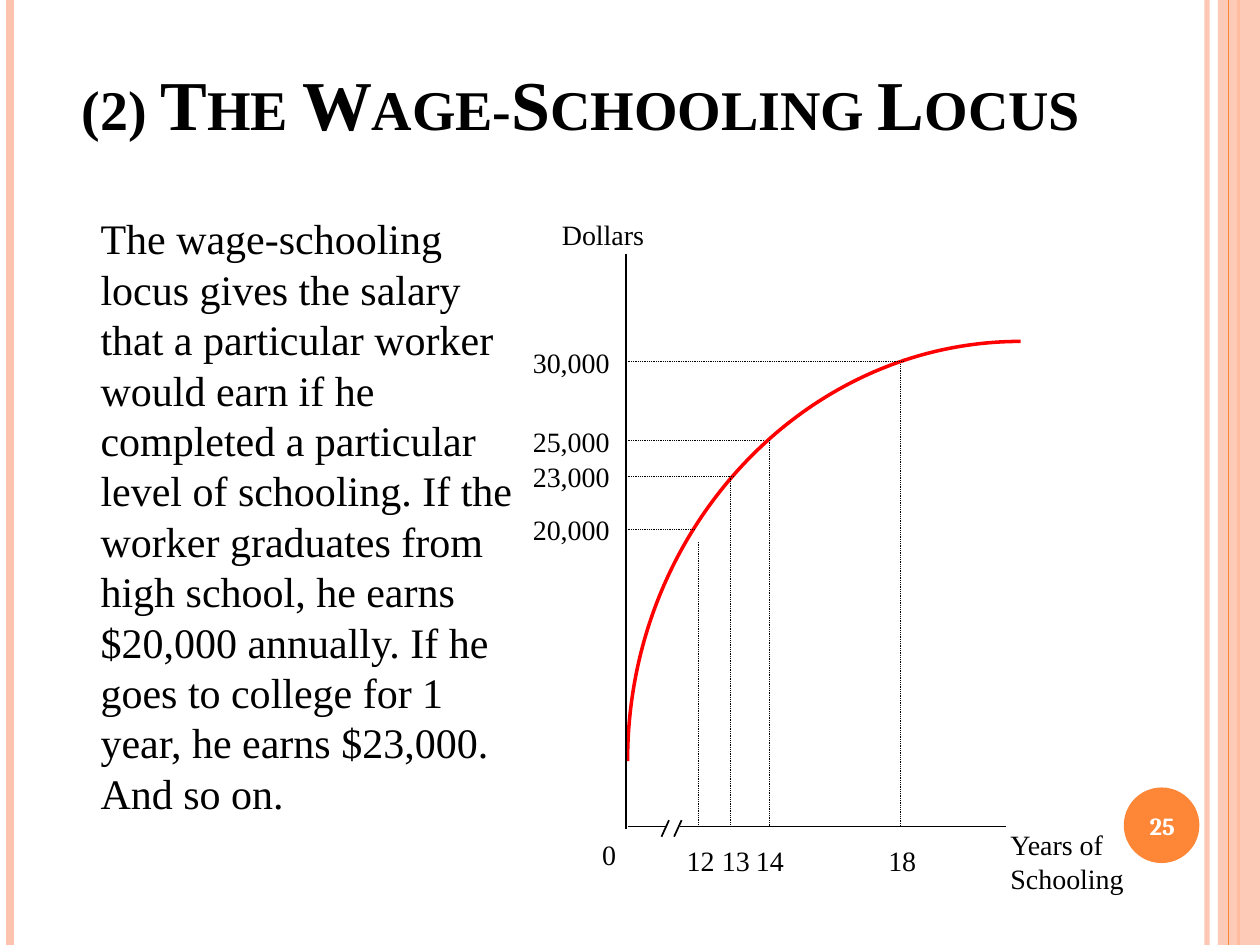
from pptx import Presentation
from pptx.dml.color import RGBColor
from pptx.enum.dml import MSO_LINE_DASH_STYLE as Dash
from pptx.enum.shapes import MSO_CONNECTOR as Connector, MSO_SHAPE as Shape
from pptx.enum.text import MSO_ANCHOR as Anchor, PP_ALIGN as Align
from pptx.oxml.ns import qn
from pptx.util import Pt
from lxml.etree import SubElement

BLACK = RGBColor(0x00, 0x00, 0x00)
WHITE = RGBColor(0xFF, 0xFF, 0xFF)
RED = RGBColor(0xFF, 0x00, 0x00)
PEACH = RGBColor(0xFE, 0xC3, 0xAE)
ORANGE = RGBColor(0xFE, 0x86, 0x37)
SERIF = "Times New Roman"

WIDTH, HEIGHT = 720, 540
TITLE = "(2) The Wage-Schooling Locus"
BODY = (
    "The wage-schooling locus gives the salary that a particular worker would earn "
    "if he completed a particular level of schooling. If the worker graduates from "
    "high school, he earns $20,000 annually. If he goes to college for 1 year, he "
    "earns $23,000. And so on."
)

LEFT_STRIPES = [(689.8, PEACH, 3, 93), (5.8, PEACH, 4.5, 100), (707.8, ORANGE, 1.5, 100)]
RIGHT_STRIPE = (702, ORANGE, 0.75, 100)

AXIS_X, AXIS_Y = 357.8, 472.3
CURVE_LEFT, CURVE_TOP, CURVE_RIGHT, CURVE_BOTTOM = 358.6, 195.1, 583.2, 434.9
BEZIER = [(0.45, 0), (0, 0.45), (0, 1)]
AXES = [
    (AXIS_X, 145.4, AXIS_X, 473.8),
    (CURVE_LEFT, AXIS_Y, 380.9, AXIS_Y),
    (388.8, AXIS_Y, 574.6, AXIS_Y),
]
BREAK_MARKS = [378, 385.2]

# year, wage, drop x, drop top, guide y, guide end, year label left
POINTS = [
    ("12", "20,000", 398.9, 309.6, 302.4, 396.7, 391.7),
    ("13", "23,000", 417.6, 272.9, 272.2, 419.8, 411.8),
    ("14", "25,000", 439.9, 251.3, 251.8, 437, 431.3),
    ("18", "30,000", 514.8, 208.1, 206.6, 516.2, 506.9),
]
AXIS_LABELS = [
    ("0", 343.4, 478.1, 12.2, 21.6),
    ("Dollars", 320.4, 123.8, 62.6, 28.1),
    ("Years of Schooling", 576.7, 472.3, 69.8, 39.6),
]


def assign(target, values):
    for name, value in values.items():
        setattr(target, name, value)


def set_alpha(fill_owner, percent):
    color = fill_owner.find(".//" + qn("a:srgbClr"))
    SubElement(color, qn("a:alpha")).set("val", str(percent * 1000))


def add_line(page, start_x, start_y, end_x, end_y, color=BLACK, width=1, dash=None, alpha=100):
    line = page.shapes.add_connector(
        Connector.STRAIGHT, Pt(start_x), Pt(start_y), Pt(end_x), Pt(end_y))
    line.line.color.rgb = color
    assign(line.line, {"width": Pt(width), "dash_style": dash})
    properties = line._element.spPr
    if alpha < 100:
        set_alpha(properties, alpha)
    SubElement(properties, qn("a:effectLst"))


def add_stripe(page, x, color, width, alpha):
    add_line(page, x, 0, x, HEIGHT, color, width, alpha=alpha)


def add_solid(page, kind, left, top, width, height, color):
    shape = page.shapes.add_shape(kind, Pt(left), Pt(top), Pt(width), Pt(height))
    shape.shadow.inherit = False
    shape.fill.solid()
    shape.fill.fore_color.rgb = color
    shape.line.fill.background()
    return shape


def add_text(page, text, left, top, width, height, size, inset=None,
             anchor=Anchor.TOP, align=Align.LEFT, spacing=None, font=SERIF, bold=False):
    box = page.shapes.add_textbox(Pt(left), Pt(top), Pt(width), Pt(height))
    frame = box.text_frame
    assign(frame, {"word_wrap": True, "vertical_anchor": anchor})
    if inset is not None:
        sides = ("left", "top", "right", "bottom")
        assign(frame, {f"margin_{side}": Pt(inset) for side in sides})
    para = frame.paragraphs[0]
    assign(para, {"alignment": align, "line_spacing": spacing})
    span = para.add_run()
    span.text = text
    assign(span.font, {"name": font, "size": Pt(size), "bold": bold})
    span.font.color.rgb = BLACK
    return span


def add_label(page, text, left, top, width, height):
    add_text(page, text, left, top, width, height, 16, inset=0.72)


def add_curve(page):
    builder = page.shapes.build_freeform(Pt(CURVE_RIGHT), Pt(CURVE_TOP))
    builder.add_line_segments([(Pt(CURVE_LEFT), Pt(CURVE_BOTTOM))], close=False)
    curve = builder.convert_to_shape()
    curve.shadow.inherit = False
    curve.fill.background()
    curve.line.color.rgb = RED
    curve.line.width = Pt(2)
    outline = curve._element.find(".//" + qn("a:path"))
    outline.remove(outline.find(qn("a:lnTo")))
    segment = SubElement(outline, qn("a:cubicBezTo"))
    for across, down in BEZIER:
        point = SubElement(segment, qn("a:pt"))
        point.set("x", str(round(across * curve.width)))
        point.set("y", str(round(down * curve.height)))


def add_graph(page):
    add_curve(page)
    for axis in AXES:
        add_line(page, *axis)
    for x in BREAK_MARKS:
        add_line(page, x + 4.3, 468.7, x, 478.1)
    for year, wage, drop_x, drop_top, guide_y, guide_end, year_left in POINTS:
        add_line(page, drop_x, drop_top, drop_x, AXIS_Y, width=0.5, dash=Dash.ROUND_DOT)
        add_line(page, CURVE_LEFT, guide_y, guide_end, guide_y, width=0.5, dash=Dash.ROUND_DOT)
        add_label(page, year, year_left, 481.3, 18.7, 21.6)
        add_label(page, wage, 303.8, guide_y - 10.1, 52.6, 20.2)
    for label in AXIS_LABELS:
        add_label(page, *label)


def main():
    deck = Presentation()
    assign(deck, {"slide_width": Pt(WIDTH), "slide_height": Pt(HEIGHT)})
    page = deck.slides.add_slide(deck.slide_layouts[6])

    for stripe in LEFT_STRIPES:
        add_stripe(page, *stripe)
    band = add_solid(page, Shape.RECTANGLE, 696, 0, 24, HEIGHT, PEACH)
    set_alpha(band._element.spPr, 87)
    add_stripe(page, *RIGHT_STRIPE)
    add_solid(page, Shape.OVAL, 642.2, 450, 43.2, 43.2, ORANGE)

    title = add_text(page, TITLE, 39.6, 22.3, 637.9, 72, 40, anchor=Anchor.MIDDLE, bold=True)
    title._r.get_or_add_rPr().set("cap", "small")
    add_text(page, BODY, 50.4, 118.1, 252, 356.4, 24, spacing=Pt(28.8))
    add_graph(page)
    number = add_text(page, "25", 640.1, 451.4, 48.2, 41, 14, anchor=Anchor.MIDDLE,
                      align=Align.CENTER, font="Cambria", bold=True)
    number.font.color.rgb = WHITE
    deck.save("out.pptx")


if __name__ == "__main__":
    main()
